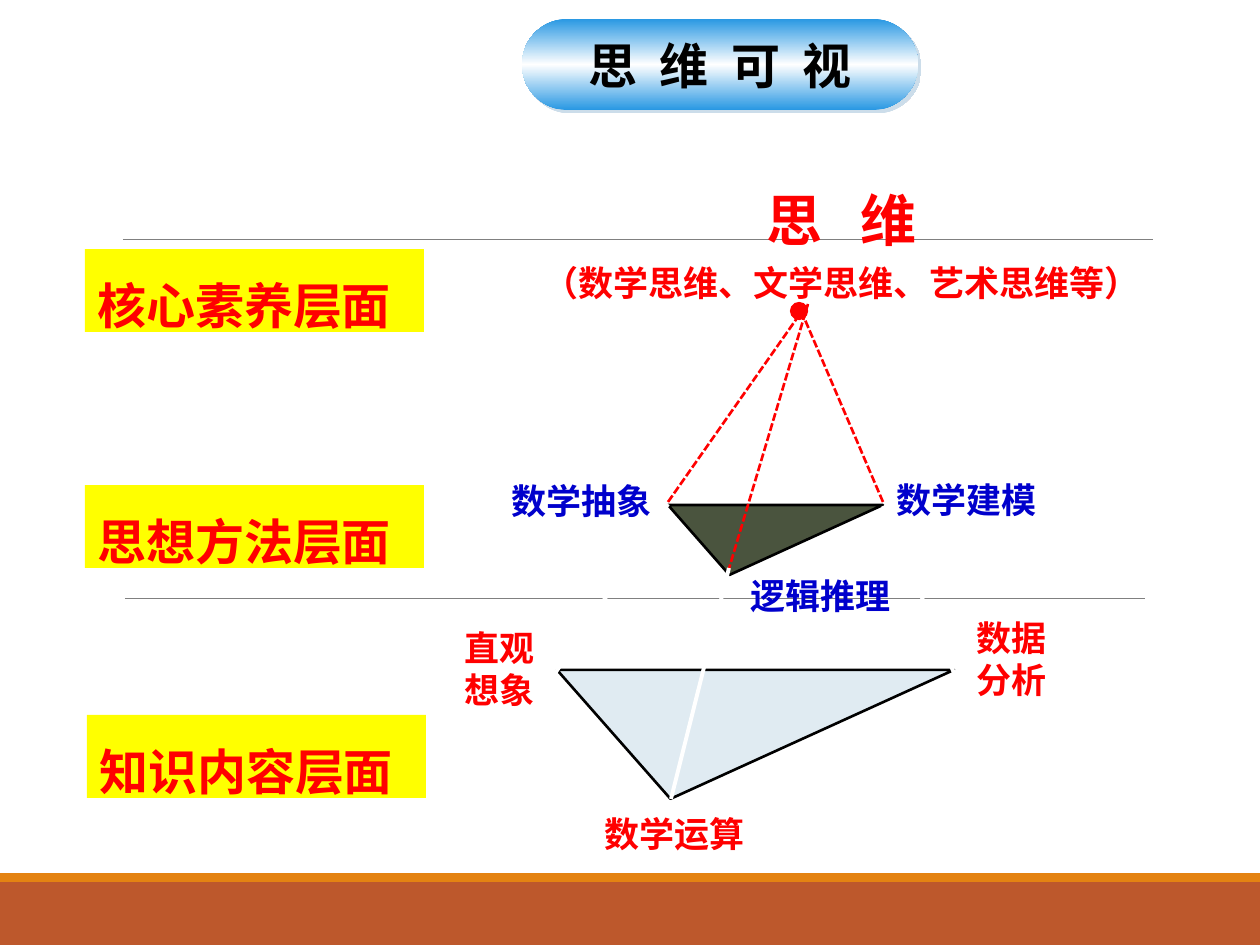
import copy

import pptx
import pptx.dml.color
import pptx.enum.dml
import pptx.enum.shapes
import pptx.enum.text
import pptx.oxml
import pptx.oxml.ns
import pptx.util

RGB = pptx.dml.color.RGBColor
SHAPE = pptx.enum.shapes.MSO_SHAPE
ALIGN = pptx.enum.text.PP_ALIGN
ANCHOR = pptx.enum.text.MSO_ANCHOR
qn = pptx.oxml.ns.qn

RED = RGB(0xFF, 0x00, 0x00)
BLUE = RGB(0x00, 0x00, 0xCC)
YELLOW = RGB(0xFF, 0xFF, 0x00)
BLACK = RGB(0x00, 0x00, 0x00)
WHITE = RGB(0xFF, 0xFF, 0xFF)
GRAY = RGB(0x80, 0x80, 0x80)
SKY = RGB(0x29, 0x98, 0xE3)
OLIVE = RGB(0x4A, 0x54, 0x3E)
PALE = RGB(0xE0, 0xEB, 0xF2)
RUST = RGB(0xBD, 0x58, 0x2C)
ORANGE = RGB(0xE4, 0x83, 0x12)
NOTO = "Noto Sans CJK SC"
NS = 'xmlns:a="http://schemas.openxmlformats.org/drawingml/2006/main"'
PILL_SHADOW = (
    f'<a:effectLst {NS}><a:outerShdw dist="35560" dir="2700000" algn="ctr" '
    'rotWithShape="0"><a:srgbClr val="CCDDEA"/></a:outerShdw></a:effectLst>'
)


def px(n):
    return pptx.util.Emu(round(n * 914400 / 126))


def add_shape(s, kind, box, fill, line=None, width=1.5):
    sp = s.shapes.add_shape(kind, *map(px, box))
    sp.shadow.inherit = False
    sp.fill.solid()
    sp.fill.fore_color.rgb = fill
    if line is None:
        sp.line.fill.background()
    else:
        sp.line.color.rgb = line
        sp.line.width = pptx.util.Pt(width)
    return sp


def add_line(s, start, end, color, width, dashed=False):
    c = s.shapes.add_connector(
        pptx.enum.shapes.MSO_CONNECTOR.STRAIGHT, *map(px, start + end))
    c.line.color.rgb = color
    c.line.width = pptx.util.Pt(width)
    if dashed:
        c.line.dash_style = pptx.enum.dml.MSO_LINE.SQUARE_DOT
    c._element.spPr.append(pptx.oxml.parse_xml(f"<a:effectLst {NS}/>"))


def add_triangle(s, box, fill):
    sp = add_shape(s, SHAPE.ISOSCELES_TRIANGLE, box, fill, BLACK)
    sp.adjustments[0] = 0.286
    sp._element.spPr.find(qn("a:xfrm")).set("flipV", "1")


def format_run(r, size, color, font, tracking=0):
    r.font.size = pptx.util.Pt(size)
    r.font.bold = True
    r.font.color.rgb = color
    r.font.name = font
    rPr = r.font._element
    if font == NOTO:
        ea = rPr.makeelement(qn("a:ea"), {"typeface": font})
        rPr.find(qn("a:latin")).addnext(ea)
    if tracking:
        rPr.set("spc", str(tracking))


def write_label(sp, text, size, color, font, spacing):
    tf = sp.text_frame
    tf.word_wrap = True
    tf.vertical_anchor = ANCHOR.TOP
    tf.text = text
    for p in tf.paragraphs:
        p.alignment = ALIGN.LEFT
        p.line_spacing = spacing
        pPr = p._p.get_or_add_pPr()
        pPr.set("marL", str(px(48)))
        pPr.set("indent", str(-px(48)))
        format_run(p.runs[0], size, color, font)


def add_level(s, text, box):
    sp = add_shape(s, SHAPE.RECTANGLE, box, YELLOW)
    write_label(sp, text, 28, RED, NOTO, 1.35)


def add_label(s, text, box, color, spacing=1.35):
    sp = s.shapes.add_textbox(*map(px, box))
    write_label(sp, text, 20, color, "Arial", spacing)


def add_title(s):
    sp = add_shape(s, SHAPE.ROUNDED_RECTANGLE, (522, 19, 396, 91), SKY)
    sp.adjustments[0] = 0.5
    sp.fill.gradient()
    sp.fill.gradient_angle = 90
    spPr = sp._element.spPr
    stops = spPr.find(qn("a:gradFill")).find(qn("a:gsLst"))
    stops.insert(1, copy.deepcopy(stops[0]))
    for stop, position, color in zip(
            sp.fill.gradient_stops, (0, 0.5, 1), (SKY, WHITE, SKY)):
        stop.position = position
        stop.color.rgb = color
    effects = spPr.find(qn("a:effectLst"))
    spPr.replace(effects, pptx.oxml.parse_xml(PILL_SHADOW))
    tf = sp.text_frame
    tf.word_wrap = False
    tf.vertical_anchor = ANCHOR.MIDDLE
    tf.text = "思 维 可 视"
    p = tf.paragraphs[0]
    p.alignment = ALIGN.CENTER
    format_run(p.runs[0], 28, BLACK, NOTO, 320)


def add_thinking(s):
    tf = s.shapes.add_textbox(*map(px, (524, 179, 635, 202))).text_frame
    tf.word_wrap = True
    tf.text = "思 维\n（数学思维、文学思维、艺术思维等）"
    head, detail = tf.paragraphs
    head.alignment = detail.alignment = ALIGN.CENTER
    detail.space_before = pptx.util.Pt(5)
    format_run(head.runs[0], 32, RED, "Calibri", 720)
    format_run(detail.runs[0], 20, RED, NOTO)


def main():
    prs = pptx.Presentation()
    prs.slide_width, prs.slide_height = px(1260), px(945)
    s = prs.slides.add_slide(prs.slide_layouts[6])

    add_line(s, (123, 239), (1153, 239), GRAY, 0.5)
    add_shape(s, SHAPE.RECTANGLE, (0, 882, 1260, 63), RUST)
    add_shape(s, SHAPE.RECTANGLE, (0, 873, 1260, 9), ORANGE)
    add_line(s, (125, 598), (1145, 598), GRAY, 0.5)

    add_triangle(s, (668, 505, 215, 70), OLIVE)
    add_title(s)
    add_line(s, (728, 572), (808, 304), RED, 1.5, True)
    add_shape(s, SHAPE.OVAL, (791, 303, 16, 16), RED, RED, 1.25)

    for text, left, top in (
        ("知识内容层面", 87, 715),
        ("思想方法层面", 85, 485),
        ("核心素养层面", 85, 249),
    ):
        add_level(s, text, (left, top, 339, 83))

    add_label(s, "数学运算", (592, 792, 183, 69), RED)
    add_label(s, "数据\n分析", (964, 610, 120, 127), RED, 1)
    add_label(s, "直观\n想象", (452, 620, 106, 108), RED, 1)
    for text, left, top in (
        ("数学建模", 884, 458),
        ("逻辑推理", 738, 554),
        ("数学抽象", 499, 459),
    ):
        add_label(s, text, (left, top, 170, 69), BLUE)

    add_thinking(s)
    add_line(s, (883, 502), (800, 308), RED, 1.5, True)
    add_line(s, (668, 502), (800, 314), RED, 1.5, True)
    add_triangle(s, (557, 670, 397, 129), PALE)
    for start, end in (
        ((729, 568), (671, 799)),
        ((668, 504), (556, 672)),
        ((883, 506), (954, 673)),
    ):
        add_line(s, start, end, WHITE, 2.25)

    prs.save("out.pptx")


if __name__ == "__main__":
    main()
